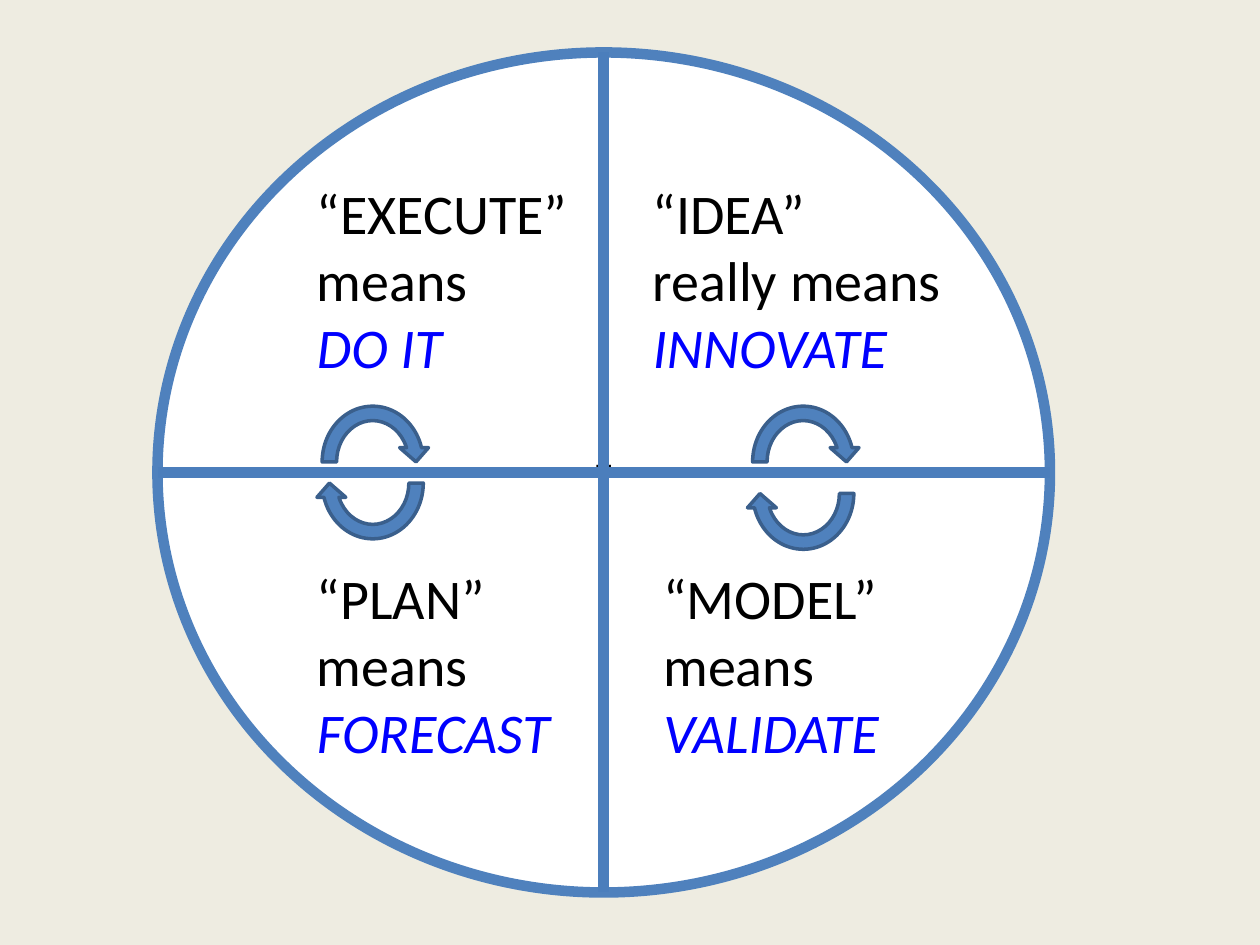
import dataclasses

import pptx
import pptx.dml.color
import pptx.enum.shapes
import pptx.enum.text
import pptx.oxml.ns
import pptx.util
from lxml import etree

Pt = pptx.util.Pt
SHAPES = pptx.enum.shapes.MSO_SHAPE


@dataclasses.dataclass(frozen=True)
class Theme:
    font: str = "Calibri"
    background: str = "EEECE1"
    disc: str = "FFFFFF"
    ring: str = "4F81BD"
    divider: str = "4B7EBC"
    arrow_edge: str = "3A5F8C"
    ink: str = "000000"
    accent: str = "0000FF"
    body_size: int = 32
    small_size: int = 18
    heavy: int = 6
    thin: int = 2


THEME = Theme()
LEFT, TOP, WIDTH, HEIGHT = 90, 30, 510, 480
CENTER_X, CENTER_Y = LEFT + WIDTH / 2, TOP + HEIGHT / 2
UPPER_TEXT, LOWER_TEXT, TEXT_HEIGHT = 98.5, 318.5, 124
ARROW_WIDTH, ARROW_HEIGHT = 66, 72

QUADRANTS = [
    (366, UPPER_TEXT, 186, [["“IDEA”"], ["really means"], ["*INNOVATE"]]),
    (372, LOWER_TEXT, 162, [["“MODEL” means ", "*VALIDATE"]]),
    (174, UPPER_TEXT, 186, [["“EXECUTE” means"], ["*DO IT"]]),
    (174, LOWER_TEXT, 150, [["“PLAN” means"], ["*FORECAST"]]),
]
ARROWS = [(180, 228, 0), (426, 228, 0), (180, 240, 180), (426, 246, 180)]


def rgb(value):
    return pptx.dml.color.RGBColor.from_string(value)


def apply(target, formats):
    for name, value in formats.items():
        setattr(target, name, value)


def paint(fill, color):
    fill.solid()
    fill.fore_color.rgb = rgb(color)


def outline(line, color, width):
    paint(line.fill, color)
    line.width = Pt(width)


def add_span(para, text, size, color, italic=False):
    span = para.add_run()
    span.text = text
    apply(span.font, {"name": THEME.font, "size": Pt(size), "italic": italic})
    span.font.color.rgb = rgb(color)


def add_figure(slide, kind, bounds, fill, edge, width, rotation=0):
    figure = slide.shapes.add_shape(kind, *map(Pt, bounds))
    figure.shadow.inherit = False
    figure.rotation = rotation
    paint(figure.fill, fill)
    outline(figure.line, edge, width)
    return figure


def add_disc(slide):
    disc = add_figure(slide, SHAPES.OVAL, (LEFT, TOP, WIDTH, HEIGHT),
                      THEME.disc, THEME.ring, THEME.heavy)
    disc.text_frame.vertical_anchor = pptx.enum.text.MSO_ANCHOR.MIDDLE
    para = disc.text_frame.paragraphs[0]
    para.alignment = pptx.enum.text.PP_ALIGN.CENTER
    add_span(para, "T", THEME.small_size, THEME.ink)


def add_divider(slide, *ends):
    divider = slide.shapes.add_connector(
        pptx.enum.shapes.MSO_CONNECTOR.STRAIGHT, *map(Pt, ends))
    outline(divider.line, THEME.divider, THEME.heavy)
    etree.SubElement(divider._element.spPr, pptx.oxml.ns.qn("a:effectLst"))


def add_quadrant(slide, left, top, width, paragraphs):
    box = slide.shapes.add_textbox(*map(Pt, (left, top, width, TEXT_HEIGHT)))
    frame = box.text_frame
    apply(frame, {"word_wrap": True,
                  "auto_size": pptx.enum.text.MSO_AUTO_SIZE.SHAPE_TO_FIT_TEXT})
    for index, spans in enumerate(paragraphs):
        para = frame.add_paragraph() if index else frame.paragraphs[0]
        for text in spans:
            answer = text.startswith("*")
            add_span(para, text.lstrip("*"), THEME.body_size,
                     THEME.accent if answer else THEME.ink, answer)


def main():
    deck = pptx.Presentation()
    apply(deck, {"slide_width": Pt(720), "slide_height": Pt(540)})
    slide = deck.slides.add_slide(deck.slide_layouts[6])
    paint(slide.background.fill, THEME.background)
    add_disc(slide)
    add_divider(slide, CENTER_X, TOP, CENTER_X, TOP + HEIGHT)
    add_divider(slide, LEFT, CENTER_Y, LEFT + WIDTH, CENTER_Y)
    for quadrant in QUADRANTS:
        add_quadrant(slide, *quadrant)
    for left, top, rotation in ARROWS:
        add_figure(slide, SHAPES.CIRCULAR_ARROW,
                   (left, top, ARROW_WIDTH, ARROW_HEIGHT),
                   THEME.ring, THEME.arrow_edge, THEME.thin, rotation)
    deck.save("out.pptx")


if __name__ == "__main__":
    main()
